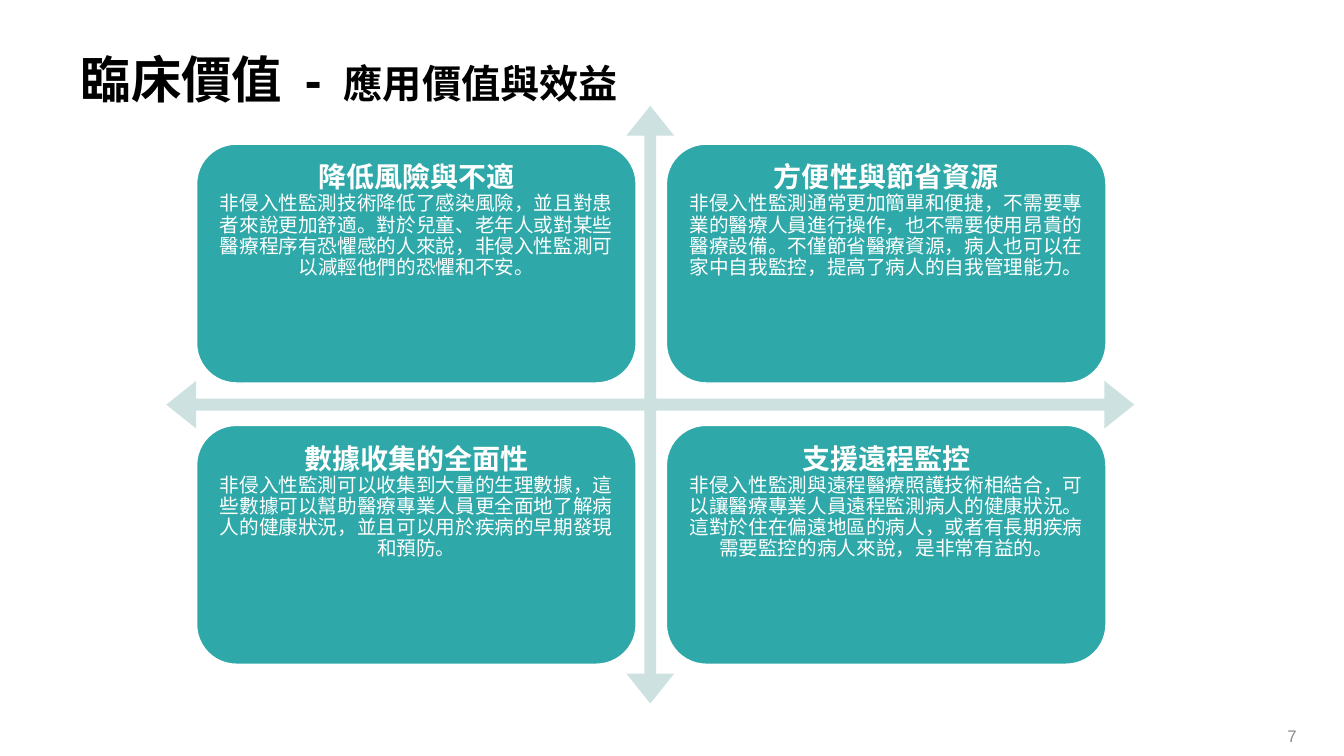
from dataclasses import dataclass

from pptx import Presentation
from pptx.dml.color import RGBColor
from pptx.enum.shapes import MSO_SHAPE as Preset
from pptx.enum.text import MSO_ANCHOR as Anchor, PP_ALIGN as Align
from pptx.util import Inches, Pt

COLORS = {
    "title": "000000",
    "number": "8C8C8C",
    "axes": "CDE1E1",
    "card": "2EA8A8",
    "white": "FFFFFF",
}
FONT = "Arial"
CARD_LEFT, CARD_TOP = 1.95, 1.43
CARD_WIDTH, CARD_HEIGHT = 4.36, 2.37
COLUMN_STEP, ROW_STEP = 4.66, 2.79


@dataclass(frozen=True)
class Benefit:
    heading: str
    detail: str


BENEFITS = [
    Benefit(
        "降低風險與不適",
        "非侵入性監測技術降低了感染風險，並且對患者來說更加舒適。"
        "對於兒童、老年人或對某些醫療程序有恐懼感的人來說，非侵入性監測可以減輕他們的恐懼和不安。",
    ),
    Benefit(
        "方便性與節省資源",
        "非侵入性監測通常更加簡單和便捷，不需要專業的醫療人員進行操作，也不需要使用昂貴的醫療設備。"
        "不僅節省醫療資源，病人也可以在家中自我監控，提高了病人的自我管理能力。",
    ),
    Benefit(
        "數據收集的全面性",
        "非侵入性監測可以收集到大量的生理數據，這些數據可以幫助醫療專業人員更全面地了解病人的健康狀況，"
        "並且可以用於疾病的早期發現和預防。",
    ),
    Benefit(
        "支援遠程監控",
        "非侵入性監測與遠程醫療照護技術相結合，可以讓醫療專業人員遠程監測病人的健康狀況。"
        "這對於住在偏遠地區的病人，或者有長期疾病需要監控的病人來說，是非常有益的。",
    ),
]


def color(name: str) -> RGBColor:
    return RGBColor.from_string(COLORS[name])


def style(paragraph, ink: str, align: Align) -> None:
    paragraph.alignment = align
    paragraph.font.name = FONT
    paragraph.font.color.rgb = color(ink)


def add_run(paragraph, text: str, size: float, bold: bool):
    run = paragraph.add_run()
    run.text = text
    run.font.size = Pt(size)
    run.font.bold = bold
    return run


def add_filled(slide, preset: Preset, left: float, top: float,
               width: float, height: float, fill: str):
    shape = slide.shapes.add_shape(
        preset, Inches(left), Inches(top), Inches(width), Inches(height))
    shape.shadow.inherit = False
    shape.fill.solid()
    shape.fill.fore_color.rgb = color(fill)
    return shape


def add_title(slide) -> None:
    title = slide.shapes.title
    title.left, title.top = Inches(0.7), Inches(0.4)
    title.width, title.height = Inches(12.27), Inches(0.76)
    title.text_frame.vertical_anchor = Anchor.MIDDLE
    paragraph = title.text_frame.paragraphs[0]
    style(paragraph, "title", Align.LEFT)
    add_run(paragraph, "臨床價值", 36, True)
    dash = add_run(paragraph, " -", 36, True)
    dash.font._element.set("spc", "800")
    add_run(paragraph, " 應用價值與效益", 28, True)


def add_axes(slide) -> None:
    axes = add_filled(slide, Preset.QUAD_ARROW, 1.65, 1.05, 9.6, 5.93, "axes")
    axes.line.fill.background()
    for index, ratio in enumerate((0.02, 0.04, 0.05)):
        axes.adjustments[index] = ratio


def add_card(slide, benefit: Benefit, column: int, row: int) -> None:
    card = add_filled(
        slide, Preset.ROUNDED_RECTANGLE,
        CARD_LEFT + column * COLUMN_STEP, CARD_TOP + row * ROW_STEP,
        CARD_WIDTH, CARD_HEIGHT, "card")
    card.line.color.rgb = color("white")
    card.line.width = Pt(1)
    frame = card.text_frame
    frame.word_wrap = True
    frame.vertical_anchor = Anchor.TOP
    frame.margin_left = frame.margin_right = Inches(0.08)
    frame.margin_top = frame.margin_bottom = Inches(0.08)
    paragraph = frame.paragraphs[0]
    style(paragraph, "white", Align.CENTER)
    paragraph.line_spacing = 0.9
    add_run(paragraph, benefit.heading, 20, True)
    paragraph.add_line_break()
    add_run(paragraph, benefit.detail, 14, False)


def add_page_number(slide) -> None:
    number = slide.shapes.add_textbox(
        Inches(11.6), Inches(7.1), Inches(1.36), Inches(0.4))
    number.text_frame.word_wrap = True
    number.text_frame.vertical_anchor = Anchor.MIDDLE
    paragraph = number.text_frame.paragraphs[0]
    paragraph.text = "7"
    style(paragraph, "number", Align.RIGHT)
    paragraph.font.size = Pt(12)


def main() -> None:
    deck = Presentation()
    deck.slide_width, deck.slide_height = Inches(13.33), Inches(7.5)
    slide = deck.slides.add_slide(deck.slide_layouts[5])
    add_page_number(slide)
    add_title(slide)
    add_axes(slide)
    for index, benefit in enumerate(BENEFITS):
        row, column = divmod(index, 2)
        add_card(slide, benefit, column, row)
    deck.save("out.pptx")


if __name__ == "__main__":
    main()
